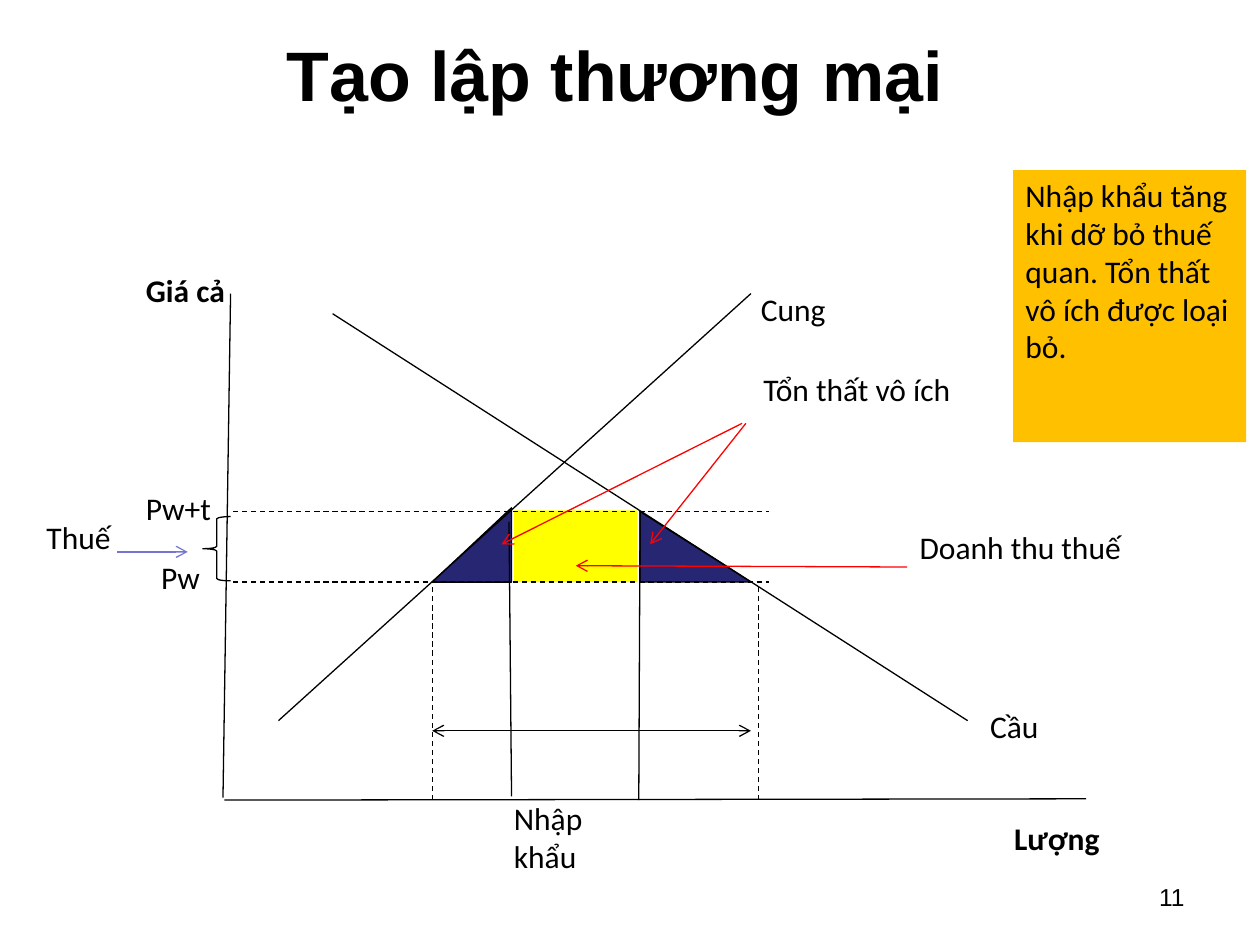
from lxml import etree
from pptx import Presentation
from pptx.dml.color import RGBColor
from pptx.enum import dml, shapes, text
from pptx.oxml import ns
from pptx.util import Inches, Pt

BLACK = RGBColor(0x00, 0x00, 0x00)
RED = RGBColor(0xFF, 0x00, 0x00)
YELLOW = RGBColor(0xFF, 0xFF, 0x00)
NAVY = RGBColor(0x26, 0x26, 0x73)
LAVENDER = RGBColor(0x75, 0x75, 0xD1)
AMBER = RGBColor(0xFF, 0xC0, 0x00)
SHAPE = shapes.MSO_SHAPE
ALIGN = text.PP_ALIGN


def write(shape, words, size=18, font="Calibri", bold=False,
          align=ALIGN.LEFT, anchor=text.MSO_ANCHOR.TOP, after=10):
    frame = shape.text_frame
    frame.word_wrap = True
    frame.vertical_anchor = anchor
    frame.text = words
    paragraph = frame.paragraphs[0]
    paragraph.alignment = align
    paragraph.space_after = Pt(after)
    run_font = paragraph.runs[0].font
    run_font.name, run_font.size, run_font.bold = font, Pt(size), bold
    run_font.color.rgb = BLACK


def add_text(slide, box, words, **style):
    write(slide.shapes.add_textbox(*map(Inches, box)), words, **style)


def add_area(slide, kind, box, fill=None, outlined=False):
    area = slide.shapes.add_shape(kind, *map(Inches, box))
    area.shadow.inherit = False
    if fill is None:
        area.fill.background()
    else:
        area.fill.solid()
        area.fill.fore_color.rgb = fill
    if outlined:
        area.line.color.rgb = BLACK
        area.line.width = Pt(0.75)
    else:
        area.line.fill.background()
    return area


def add_line(slide, start, end, color=BLACK, dashed=False, arrows=()):
    """Draw a straight line; arrows lists the ends (headEnd, tailEnd) with a tip."""
    line = slide.shapes.add_connector(
        shapes.MSO_CONNECTOR.STRAIGHT, *map(Inches, (*start, *end)))
    line.line.color.rgb = color
    line.line.width = Pt(0.75)
    if dashed:
        line.line.dash_style = dml.MSO_LINE.DASH
    for tip in arrows:
        etree.SubElement(line.line._get_or_add_ln(), ns.qn(f"a:{tip}"), type="arrow")
    etree.SubElement(line._element.spPr, ns.qn("a:effectLst"))


def draw_title(slide, box):
    add_text(slide, box, "Tạo lập thương mại", size=40, font="Arial", bold=True,
             align=ALIGN.CENTER, anchor=text.MSO_ANCHOR.MIDDLE, after=0)


def draw_note(slide, box):
    note = add_area(slide, SHAPE.RECTANGLE, box, AMBER)
    write(note, "Nhập khẩu tăng khi dỡ bỏ thuế quan. Tổn thất vô ích được loại bỏ.")


def draw_page_number(slide, box):
    add_text(slide, box, "11", size=14, font="Arial", align=ALIGN.RIGHT, after=0)


def draw_market(slide, box):
    """Supply and demand under a tariff; offsets count from the plot's top left."""
    left, top, width, height = box

    def at(x, y):
        return left + x, top + y

    def frame(x, y, w, h):
        return (*at(x, y), w, h)

    # Prices with and without the tariff, and the quantities they lead to
    taxed_price, world_price = 1.76, 2.32
    free_supply, taxed_supply, taxed_demand, free_demand = 1.63, 2.26, 3.28, 4.22
    gap = world_price - taxed_price

    # Tariff revenue and the two deadweight losses
    add_area(slide, SHAPE.RECTANGLE,
             frame(taxed_supply + 0.02, taxed_price - 0.01, 0.98, gap + 0.01), YELLOW)
    add_area(slide, SHAPE.RIGHT_TRIANGLE,
             frame(taxed_demand, taxed_price, 0.88, gap), NAVY, outlined=True)
    supply_loss = add_area(slide, SHAPE.RIGHT_TRIANGLE,
                           frame(1.65, 1.71, 0.59, 0.63), NAVY, outlined=True)
    supply_loss.rotation = 270

    # Axes, supply curve and demand curve
    for start, end in (
        ((0.03, 0.03), (-0.03, height - 0.02)),
        ((width, height - 0.01), (-0.02, height)),
        ((4.16, 0.03), (0.41, 3.42)),
        ((0.84, 0.19), (5.88, 3.42)),
    ):
        add_line(slide, at(*start), at(*end))

    # Price levels and quantity drops
    for price in (taxed_price, world_price):
        add_line(slide, at(0.05, price), at(4.3, price), dashed=True)
    for quantity in (free_supply, free_demand):
        add_line(slide, at(quantity, height), at(quantity, world_price), dashed=True)
    add_line(slide, at(taxed_supply, height - 0.03), at(taxed_supply - 0.02, 1.84))
    add_line(slide, at(taxed_demand - 0.01, height), at(taxed_demand, taxed_price))

    # Tariff brace and pointers
    add_area(slide, SHAPE.LEFT_BRACE, frame(-0.19, 1.8, 0.22, 0.51), outlined=True)
    for start, end, color in (
        ((-0.87, 2.08), (-0.31, 2.08), LAVENDER),
        ((4.12, 1.06), (3.36, 2.02), RED),
        ((4.09, 1.06), (2.18, 2.02), RED),
        ((5.4, 2.2), (2.77, 2.19), RED),
    ):
        add_line(slide, at(*start), at(*end), color, arrows=("tailEnd",))
    add_line(slide, at(free_supply, 3.5), at(4.16, 3.5), arrows=("headEnd", "tailEnd"))

    # Labels
    for words, x, y, label_width, bold in (
        ("Cầu", 5.96, 3.26, 1.15, False),
        ("Cung", 4.14, -0.05, 1.15, False),
        ("Giá cả", -0.74, -0.2, 1.15, True),
        ("Lượng", 6.15, 4.15, 1.15, True),
        ("Nhập khẩu", 2.18, 3.99, 1.02, False),
        ("Pw", -0.62, 2.08, 0.63, False),
        ("Pw+t", -0.74, 1.53, 0.87, False),
        ("Tổn thất vô ích", 4.16, 0.59, 1.85, False),
        ("Thuế", -1.53, 1.76, 0.81, False),
        ("Doanh thu thuế", 5.4, 1.84, 1.85, False),
    ):
        add_text(slide, frame(x, y, label_width, 0.38), words, bold=bold)


def main():
    deck = Presentation()
    deck.slide_width, deck.slide_height = Inches(10), Inches(7.5)
    slide = deck.slides.add_slide(deck.slide_layouts[6])
    draw_title(slide, (1.06, 0.21, 7.64, 0.75))
    draw_market(slide, (1.8, 2.3, 6.82, 4.05))
    draw_note(slide, (8.04, 1.35, 1.85, 2.16))
    draw_page_number(slide, (8.67, 6.95, 0.83, 0.4))
    deck.save("out.pptx")


if __name__ == "__main__":
    main()
